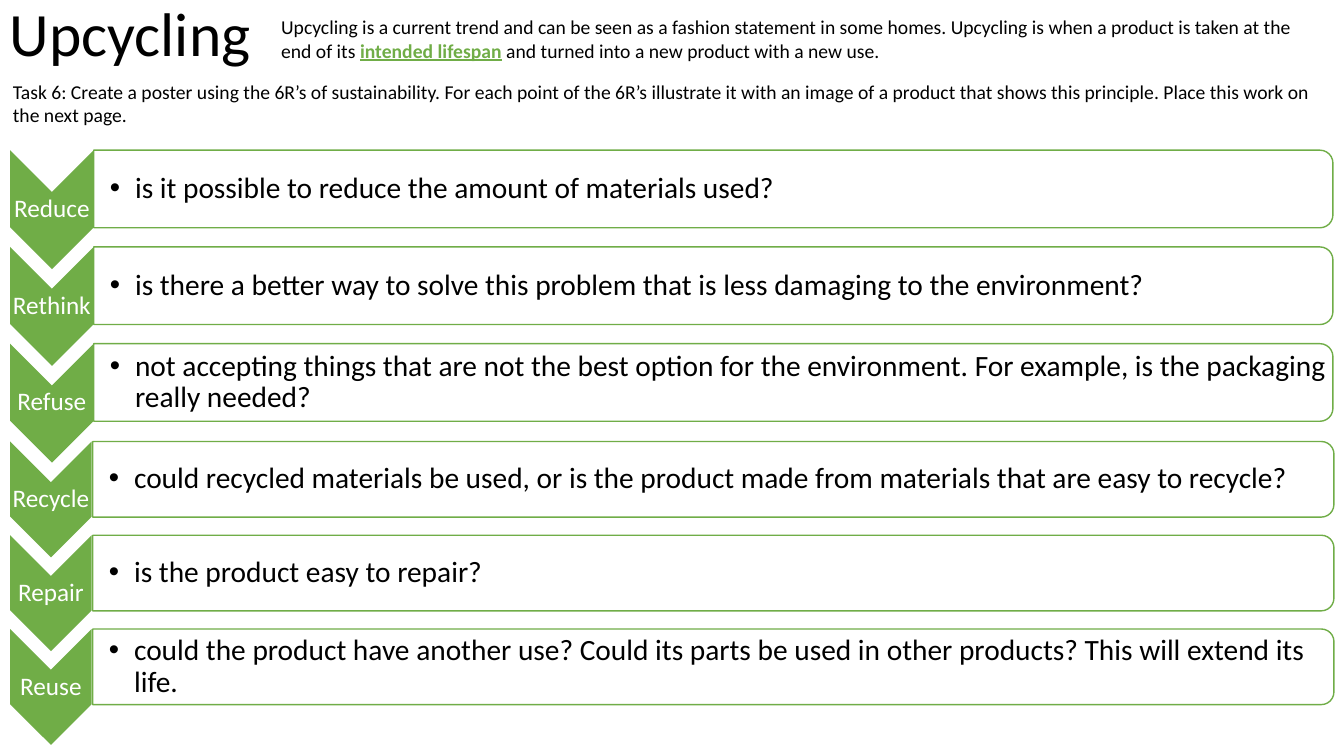
from dataclasses import dataclass

from lxml import etree
from pptx import Presentation
from pptx.dml.color import RGBColor
from pptx.enum.shapes import MSO_SHAPE
from pptx.enum.text import MSO_ANCHOR, PP_ALIGN
from pptx.oxml.ns import qn
from pptx.util import Emu, Pt

CHEVRON = MSO_SHAPE.CHEVRON
BAR = MSO_SHAPE.ROUND_2_SAME_RECTANGLE
TOP, MIDDLE = MSO_ANCHOR.TOP, MSO_ANCHOR.MIDDLE
LEFT, CENTER = PP_ALIGN.LEFT, PP_ALIGN.CENTER
PX = 9144


@dataclass(frozen=True)
class Theme:
    font: str = "Calibri"
    green: str = "70AD47"
    black: str = "000000"
    white: str = "FFFFFF"
    title: int = 44
    body: int = 14
    label: int = 18
    point: int = 21


@dataclass(frozen=True)
class Box:
    x: int
    y: int
    w: int
    h: int


@dataclass(frozen=True)
class Run:
    text: str
    size: int
    color: str
    strong: bool = False


@dataclass(frozen=True)
class Principle:
    label: str
    point: str


@dataclass(frozen=True)
class Group:
    top: int
    pitch: int
    chevron_w: int
    chevron_h: int
    bar_x: int
    bar_w: int
    bar_h: int
    principles: tuple[Principle, ...]


T = Theme()
DEFAULT_INSETS = (10, 5, 10, 5)
LABEL_INSETS = (1, 1, 1, 1)
POINT_INSETS = (16, 1, 1, 1)

INTRO = (
    Run("Upcycling is a current trend and can be seen as a fashion statement in some homes. "
        "Upcycling is when a product is taken at the end of its ", T.body, T.black),
    Run("intended lifespan", T.body, T.green, True),
    Run(" and turned into a new product with a new use.", T.body, T.black),
)
TASK = Run("Task 6: Create a poster using the 6R’s of sustainability. For each point of the 6R’s "
           "illustrate it with an image of a product that shows this principle. "
           "Place this work on the next page.", T.body, T.black)

GROUPS = (
    Group(149, 96, 83, 118, 93, 1229, 77, (
        Principle("Reduce", "is it possible to reduce the amount of materials used?"),
        Principle("Rethink", "is there a better way to solve this problem that is less "
                             "damaging to the environment?"),
        Principle("Refuse", "not accepting things that are not the best option for the "
                            "environment. For example, is the packaging really needed?"),
    )),
    Group(438, 93, 81, 115, 92, 1231, 75, (
        Principle("Recycle", "could recycled materials be used, or is the product made from "
                             "materials that are easy to recycle?"),
        Principle("Repair", "is the product easy to repair?"),
        Principle("Reuse", "could the product have another use? Could its parts be used in "
                           "other products? This will extend its life."),
    )),
)


def px(n: float) -> Emu:
    return Emu(round(n * PX))


def add_text(s, box: Box, runs: tuple[Run, ...], insets=DEFAULT_INSETS, anchor=TOP,
             align=LEFT, spacing: float = 1.0, bullet: bool = False) -> None:
    tf = s.shapes.add_textbox(px(box.x), px(box.y), px(box.w), px(box.h)).text_frame
    tf.word_wrap = True
    tf.vertical_anchor = anchor
    tf.margin_left, tf.margin_top, tf.margin_right, tf.margin_bottom = map(px, insets)
    p = tf.paragraphs[0]
    p.alignment = align
    p.line_spacing = spacing
    if bullet:
        pPr = p._p.get_or_add_pPr()
        pPr.set("marL", str(px(25)))
        pPr.set("indent", str(px(-25)))
        etree.SubElement(pPr, qn("a:buFont"), typeface="Arial")
        etree.SubElement(pPr, qn("a:buChar"), char="•")
    for run in runs:
        r = p.add_run()
        r.text = run.text
        r.font.name = T.font
        r.font.size = Pt(run.size)
        r.font.color.rgb = RGBColor.from_string(run.color)
        r.font.bold = run.strong
        r.font.underline = run.strong


def add_turned(s, kind, box: Box, fill: str, outlined: bool = False) -> None:
    shift = (box.w - box.h) / 2
    sp = s.shapes.add_shape(kind, px(box.x + shift), px(box.y - shift), px(box.h), px(box.w))
    sp.rotation = 90
    sp.shadow.inherit = False
    sp.fill.solid()
    sp.fill.fore_color.rgb = RGBColor.from_string(fill)
    if outlined:
        sp.line.color.rgb = RGBColor.from_string(T.green)
        sp.line.width = Pt(1)
    else:
        sp.line.fill.background()


def add_group(s, g: Group) -> None:
    for i, principle in enumerate(g.principles):
        y = g.top + i * g.pitch
        add_turned(s, CHEVRON, Box(10, y, g.chevron_w, g.chevron_h), T.green)
        add_text(s, Box(10, y + g.chevron_w // 2, g.chevron_w, 35),
                 (Run(principle.label, T.label, T.white),),
                 LABEL_INSETS, MIDDLE, CENTER, 0.9)
        add_turned(s, BAR, Box(g.bar_x, y, g.bar_w, g.bar_h), T.white, True)
        add_text(s, Box(g.bar_x, y + 4, g.bar_w - 3, g.bar_h - 8),
                 (Run(principle.point, T.point, T.black),),
                 POINT_INSETS, MIDDLE, LEFT, 0.9, True)


def main() -> None:
    prs = Presentation()
    prs.slide_width, prs.slide_height = px(1333), px(750)
    s = prs.slides.add_slide(prs.slide_layouts[6])
    add_text(s, Box(0, -36, 1150, 145), (Run("Upcycling", T.title, T.black),),
             anchor=MIDDLE, spacing=0.9)
    add_text(s, Box(269, 10, 1045, 81), INTRO)
    add_text(s, Box(3, 74, 1310, 57), (TASK,))
    for group in GROUPS:
        add_group(s, group)
    prs.save("out.pptx")


if __name__ == "__main__":
    main()
